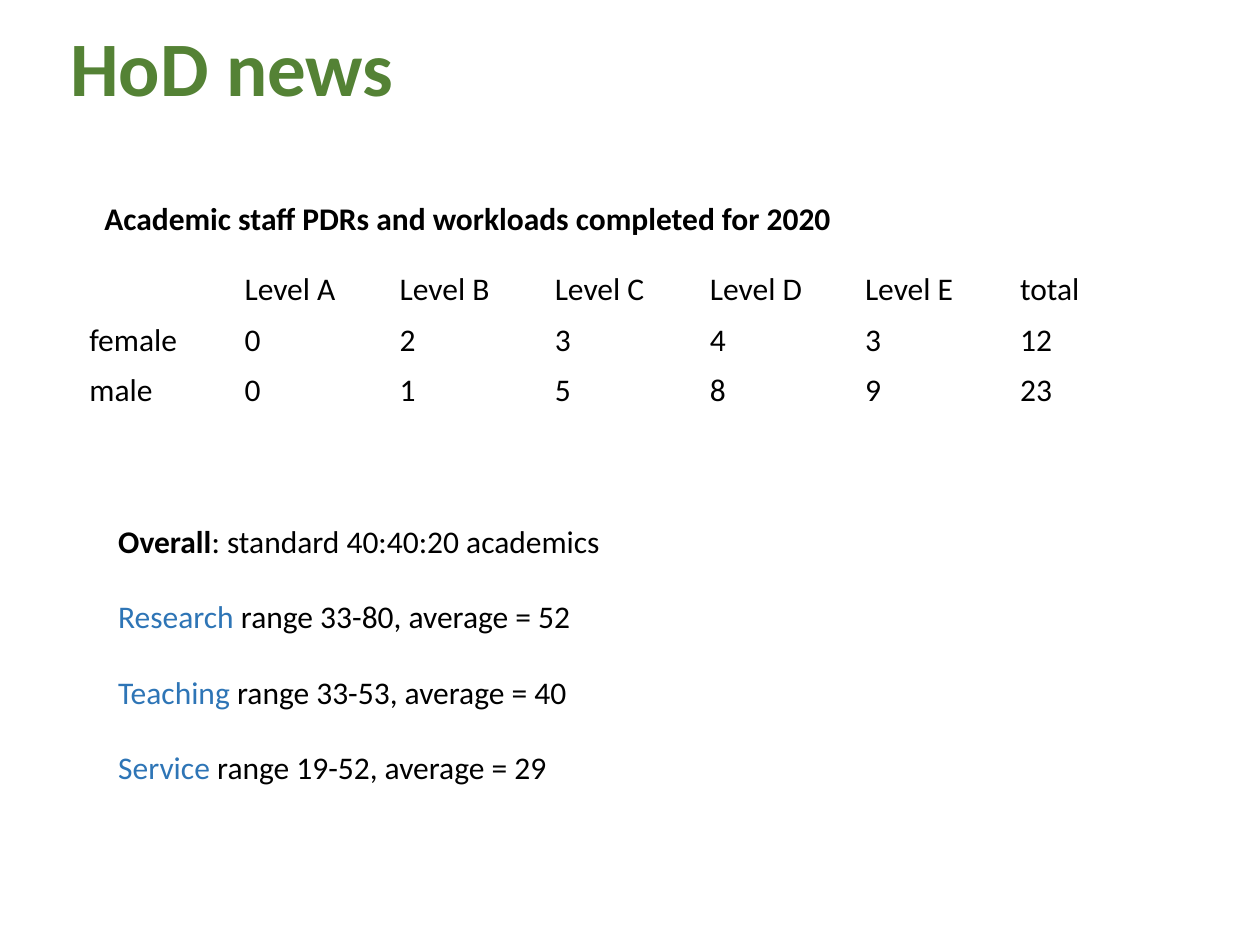
from pptx import Presentation
from pptx import util as u
from pptx.dml.color import RGBColor
from pptx.enum import text

GREEN, BLUE, BLACK = "548235", "2E75B6", "000000"

ROWS = [
    ["", "Level A", "Level B", "Level C", "Level D", "Level E", "total"],
    ["female", "0", "2", "3", "4", "3", "12"],
    ["male", "0", "1", "5", "8", "9", "23"],
]

LOADS = [
    ("Research", " range 33-80, average = 52"),
    ("Teaching", " range 33-53, average = 40"),
    ("Service", " range 19-52, average = 29"),
]


def color(code):
    return RGBColor.from_string(code)


def write(para, words, size=18, fill=BLACK, bold=False):
    run = para.add_run()
    run.text = words
    font = run.font
    font.name, font.size, font.bold = "Calibri", u.Pt(size), bold
    font.color.rgb = color(fill)


def add_box(slide, left, top, width, height, wrap=True):
    box = slide.shapes.add_textbox(*map(u.Inches, (left, top, width, height)))
    frame = box.text_frame
    frame.word_wrap = wrap
    return frame


def add_grid(slide, left, top, width, row):
    size = len(ROWS), len(ROWS[0])
    place = map(u.Inches, (left, top, width, row * len(ROWS)))
    table = slide.shapes.add_table(*size, *place).table
    table.first_row = table.horz_banding = False
    for line, values in zip(table.rows, ROWS):
        for cell, value in zip(line.cells, values):
            cell.fill.background()
            cell.vertical_anchor = text.MSO_ANCHOR.MIDDLE
            if value:
                write(cell.text_frame.paragraphs[0], value)


def add_loads(slide):
    frame = add_box(slide, 0.84, 4.09, 4.07, 2.52, wrap=False)
    para = frame.paragraphs[0]
    write(para, "Overall", bold=True)
    write(para, ": standard 40:40:20 academics")
    for name, span in LOADS:
        para = frame.add_paragraph()
        para.space_before = u.Pt(21.6)
        write(para, name, fill=BLUE)
        write(para, span)


def main():
    deck = Presentation()
    deck.slide_width, deck.slide_height = u.Inches(10), u.Inches(7.5)
    slide = deck.slides.add_slide(deck.slide_layouts[6])

    # Title
    title = add_box(slide, 0.46, 0.19, 8.62, 1.45).paragraphs[0]
    title.line_spacing = 0.9
    write(title, "HoD news", size=44, fill=GREEN, bold=True)

    # Staff table and its heading
    head = add_box(slide, 0.73, 1.53, 6.03, 1.01, wrap=False).paragraphs[0]
    write(head, "Academic staff PDRs and workloads completed for 2020", bold=True)
    add_grid(slide, 0.61, 2.1, 8.62, 0.4)

    # Workload ranges
    add_loads(slide)

    deck.save("out.pptx")


if __name__ == "__main__":
    main()
